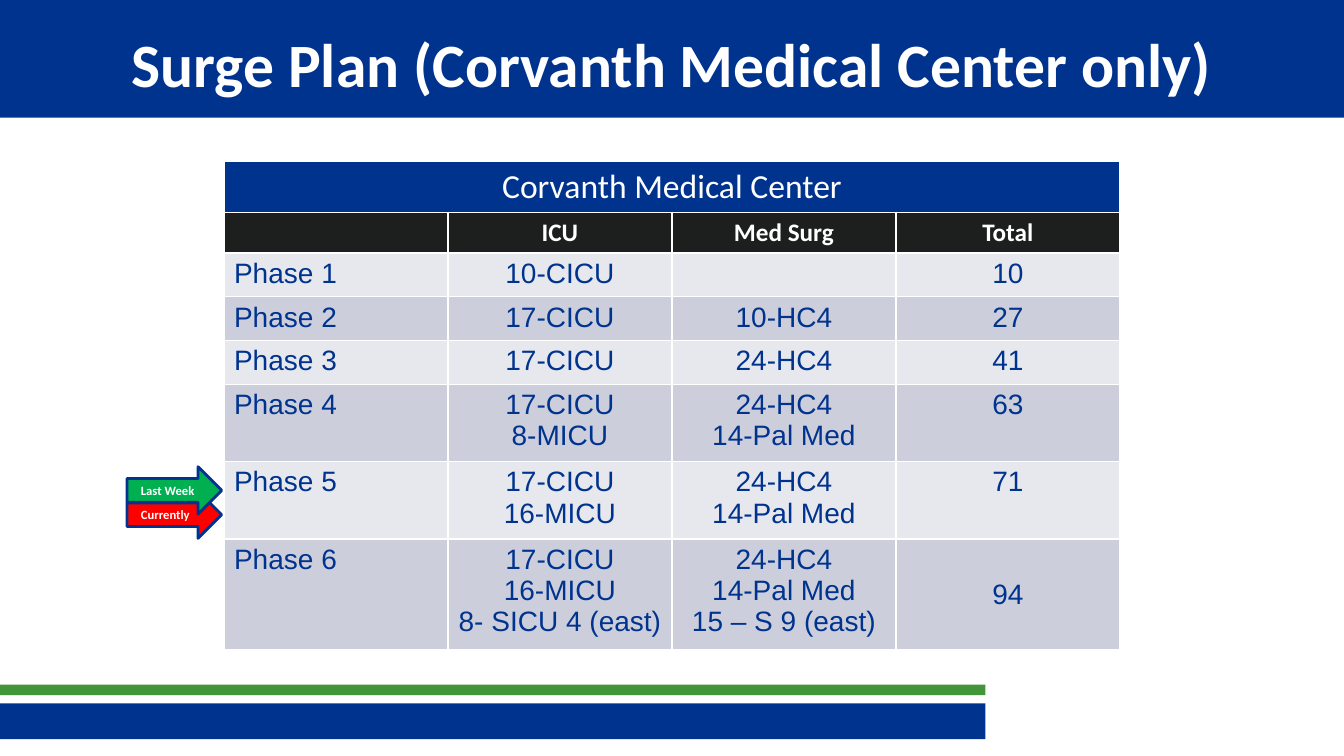
from lxml.etree import SubElement
from pptx import Presentation
from pptx.dml.color import RGBColor
from pptx.enum.shapes import MSO_SHAPE as Preset
from pptx.enum.text import MSO_ANCHOR as Anchor, PP_ALIGN as Align
from pptx.oxml.ns import qn
from pptx.util import Pt

COLORS = {
    "navy": "00338E",
    "leaf": "439539",
    "white": "FFFFFF",
    "black": "1D1E1E",
    "light": "E7E8EE",
    "dark": "CCCEDB",
    "red": "FF0000",
    "green": "00B050",
}

HEADINGS = ["", "ICU", "Med Surg", "Total"]
PHASES = [
    ("10-CICU", "", "10"),
    ("17-CICU", "10-HC4", "27"),
    ("17-CICU", "24-HC4", "41"),
    ("17-CICU\n8-MICU", "24-HC4\n14-Pal Med", "63"),
    ("17-CICU\n16-MICU", "24-HC4\n14-Pal Med", "71"),
    ("17-CICU\n16-MICU\n8- SICU 4 (east)", "24-HC4\n14-Pal Med\n15 – S 9 (east)", "94"),
]
ROW_HEIGHTS = [36, 29.2, 29.6, 29.6, 29.6, 52, 52, 74]
COLUMN_WIDTH = 160


def rgb(color):
    return RGBColor.from_string(COLORS[color])


def write(frame, text, size, color, font="Calibri", bold=False, align=Align.LEFT):
    frame.text = text
    for paragraph in frame.paragraphs:
        paragraph.alignment = align
        for run in paragraph.runs:
            run.font.name = font
            run.font.size = Pt(size)
            run.font.bold = bold
            run.font.color.rgb = rgb(color)


def add_block(shapes, preset, left, top, width, height, fill, line=None):
    block = shapes.add_shape(preset, Pt(left), Pt(top), Pt(width), Pt(height))
    block.shadow.inherit = False
    block.fill.solid()
    block.fill.fore_color.rgb = rgb(fill)
    if line:
        block.line.color.rgb = rgb(line)
        block.line.width = Pt(2)
    else:
        block.line.fill.background()


def add_label(shapes, text, left, top, width, height, size, wrap=False, align=Align.LEFT):
    label = shapes.add_textbox(Pt(left), Pt(top), Pt(width), Pt(height))
    label.text_frame.word_wrap = wrap
    label.text_frame.vertical_anchor = Anchor.MIDDLE
    write(label.text_frame, text, size, "white", bold=True, align=align)


def add_marker(slide, text, top, fill):
    marker = slide.shapes.add_group_shape()
    add_block(marker.shapes, Preset.RIGHT_ARROW, 90.7, top, 67.7, 33.8, fill, "navy")
    add_label(marker.shapes, text, 93.6, top + 7.9, 53, 18, 9)


def style_cell(cell, fill):
    properties = cell._tc.get_or_add_tcPr()
    for side in ("lnL", "lnR", "lnT", "lnB"):
        border = SubElement(properties, qn(f"a:{side}"), w=str(Pt(1)))
        solid = SubElement(border, qn("a:solidFill"))
        SubElement(solid, qn("a:srgbClr"), val=COLORS["white"])
    cell.fill.solid()
    cell.fill.fore_color.rgb = rgb(fill)


def add_surge_table(slide):
    columns = len(HEADINGS)
    frame = slide.shapes.add_table(
        len(ROW_HEIGHTS), columns, Pt(160), Pt(115.5),
        Pt(COLUMN_WIDTH * columns), Pt(sum(ROW_HEIGHTS)))
    table = frame.table
    for column in table.columns:
        column.width = Pt(COLUMN_WIDTH)
    for row, height in zip(table.rows, ROW_HEIGHTS):
        row.height = Pt(height)

    fills = ["navy", "black"] + ["light", "dark"] * (len(PHASES) // 2)
    for row, fill in zip(table.rows, fills):
        for cell in row.cells:
            style_cell(cell, fill)

    banner = table.cell(0, 0)
    banner.merge(table.cell(0, columns - 1))
    write(banner.text_frame, "Corvanth Medical Center", 24, "white", align=Align.CENTER)
    for index, heading in enumerate(HEADINGS):
        write(table.cell(1, index).text_frame, heading, 18, "white",
              bold=True, align=Align.CENTER)
    for number, beds in enumerate(PHASES, 1):
        for index, text in enumerate((f"Phase {number}", *beds)):
            write(table.cell(number + 1, index).text_frame, text, 20, "navy", "Arial",
                  align=Align.CENTER if index else Align.LEFT)
    table.cell(len(PHASES) + 1, columns - 1).vertical_anchor = Anchor.MIDDLE


def main():
    deck = Presentation()
    deck.slide_width, deck.slide_height = Pt(960), Pt(540)
    slide = deck.slides.add_slide(deck.slide_layouts[6])
    add_block(slide.shapes, Preset.RECTANGLE, -2, 502.5, 706, 25.5, "navy")
    add_block(slide.shapes, Preset.RECTANGLE, -2, 489, 706, 7.5, "leaf")
    add_block(slide.shapes, Preset.RECTANGLE, 0, 0, 960, 84, "navy")
    add_label(slide.shapes, "Surge Plan (Corvanth Medical Center only)",
              48, 12, 864, 66, 44, wrap=True, align=Align.CENTER)
    add_surge_table(slide)
    add_marker(slide, "Currently", 350.8, "red")
    add_marker(slide, "Last Week", 333.4, "green")
    deck.save("out.pptx")


if __name__ == "__main__":
    main()
